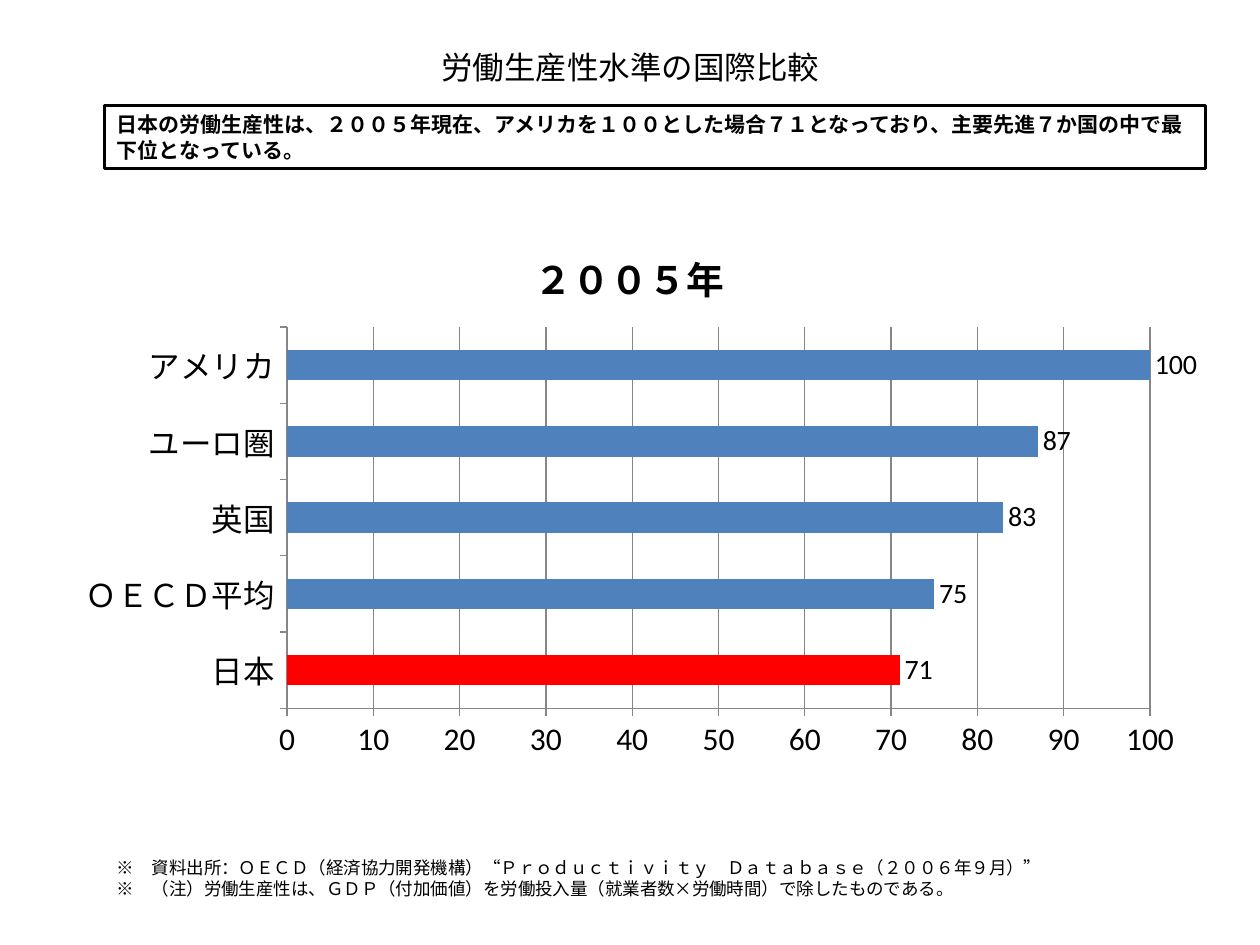
import pptx
import pptx.chart.data
import pptx.dml.color
import pptx.enum.chart
import pptx.enum.text
import pptx.util

Inches = pptx.util.Inches
FONT = "Calibri"
NOTE_FONT = "Noto Sans CJK JP"
BLACK, GRAY, BLUE, RED = "000000", "868686", "4F81BD", "FF0000"

PRODUCTIVITY = {"日本": 71, "ＯＥＣＤ平均": 75, "英国": 83, "ユーロ圏": 87, "アメリカ": 100}
SUMMARY = ("日本の労働生産性は、２００５年現在、アメリカを１００とした場合７１となっており、"
           "主要先進７か国の中で最下位となっている。")
NOTES = [
    "※　資料出所：ＯＥＣＤ（経済協力開発機構）“Ｐｒｏｄｕｃｔｉｖｉｔｙ　Ｄａｔａｂａｓｅ（２００６年９月）”",
    "※　（注）労働生産性は、ＧＤＰ（付加価値）を労働投入量（就業者数×労働時間）で除したものである。",
]


def rgb(color):
    return pptx.dml.color.RGBColor.from_string(color)


def format_font(font, size, bold=False, name=FONT, color=BLACK):
    font.size = pptx.util.Pt(size)
    font.bold = bold
    font.name = name
    font.color.rgb = rgb(color)


def write_text(text_frame, lines, size, bold=False, name=FONT, align="LEFT", anchor="TOP"):
    text_frame.word_wrap = True
    text_frame.vertical_anchor = getattr(pptx.enum.text.MSO_ANCHOR, anchor)
    for index, line in enumerate(lines):
        paragraph = text_frame.paragraphs[0] if index == 0 else text_frame.add_paragraph()
        paragraph.alignment = getattr(pptx.enum.text.PP_ALIGN, align)
        run = paragraph.add_run()
        run.text = line
        format_font(run.font, size, bold, name)


def add_title(slide, text):
    title = slide.shapes.title
    title.left, title.top = Inches(0.5), Inches(0.3)
    title.width, title.height = Inches(9), Inches(0.46)
    write_text(title.text_frame, [text], 18, align="CENTER", anchor="MIDDLE")


def add_text_box(slide, lines, left, top, width, height, border=None, **text_format):
    box = slide.shapes.add_textbox(Inches(left), Inches(top), Inches(width), Inches(height))
    write_text(box.text_frame, lines, **text_format)
    if border:
        box.line.color.rgb = rgb(border)
        box.line.width = pptx.util.Pt(1.5)


def format_axis(axis):
    format_font(axis.tick_labels.font, 18)
    axis.major_tick_mark = pptx.enum.chart.XL_TICK_MARK.OUTSIDE
    axis.minor_tick_mark = pptx.enum.chart.XL_TICK_MARK.NONE
    axis.format.line.color.rgb = rgb(GRAY)


def add_productivity_chart(slide, title, values):
    data = pptx.chart.data.CategoryChartData()
    data.categories = values.keys()
    data.add_series(title, values.values())
    chart = slide.shapes.add_chart(
        pptx.enum.chart.XL_CHART_TYPE.BAR_CLUSTERED,
        Inches(0.5), Inches(1.75), Inches(9), Inches(4.36), data).chart
    format_font(chart.font, 18)
    chart.has_legend = False
    chart.has_title = True
    write_text(chart.chart_title.text_frame, [title], 21.6, bold=True, align="CENTER")
    chart.chart_title.include_in_layout = False

    # Axes and gridlines
    format_axis(chart.category_axis)
    value_axis = chart.value_axis
    format_axis(value_axis)
    value_axis.minimum_scale, value_axis.maximum_scale = 0, 100
    value_axis.major_unit = 10
    value_axis.has_major_gridlines = True
    value_axis.major_gridlines.format.line.color.rgb = rgb(GRAY)

    # Bars, with Japan highlighted
    plot = chart.plots[0]
    plot.gap_width = 150
    plot.vary_by_categories = False
    series = plot.series[0]
    series.invert_if_negative = False
    japan = series.points[list(values).index("日本")]
    for bar, color in ((series, BLUE), (japan, RED)):
        bar.format.fill.solid()
        bar.format.fill.fore_color.rgb = rgb(color)

    # Value labels
    labels = series.data_labels
    labels.show_value = True
    labels.position = pptx.enum.chart.XL_LABEL_POSITION.OUTSIDE_END
    format_font(labels.font, 16)


def main():
    presentation = pptx.Presentation()
    presentation.slide_width, presentation.slide_height = Inches(10), Inches(7.5)
    slide = presentation.slides.add_slide(presentation.slide_layouts.get_by_name("Title Only"))

    add_title(slide, "労働生産性水準の国際比較")
    add_productivity_chart(slide, "２００５年", PRODUCTIVITY)
    # Summary and source notes
    add_text_box(slide, [SUMMARY], 0.83, 0.84, 8.74, 0.5, border=BLACK, size=12, bold=True)
    add_text_box(slide, NOTES, 0.83, 6.75, 8.9, 0.44, size=10, name=NOTE_FONT)

    presentation.save("out.pptx")


if __name__ == "__main__":
    main()
